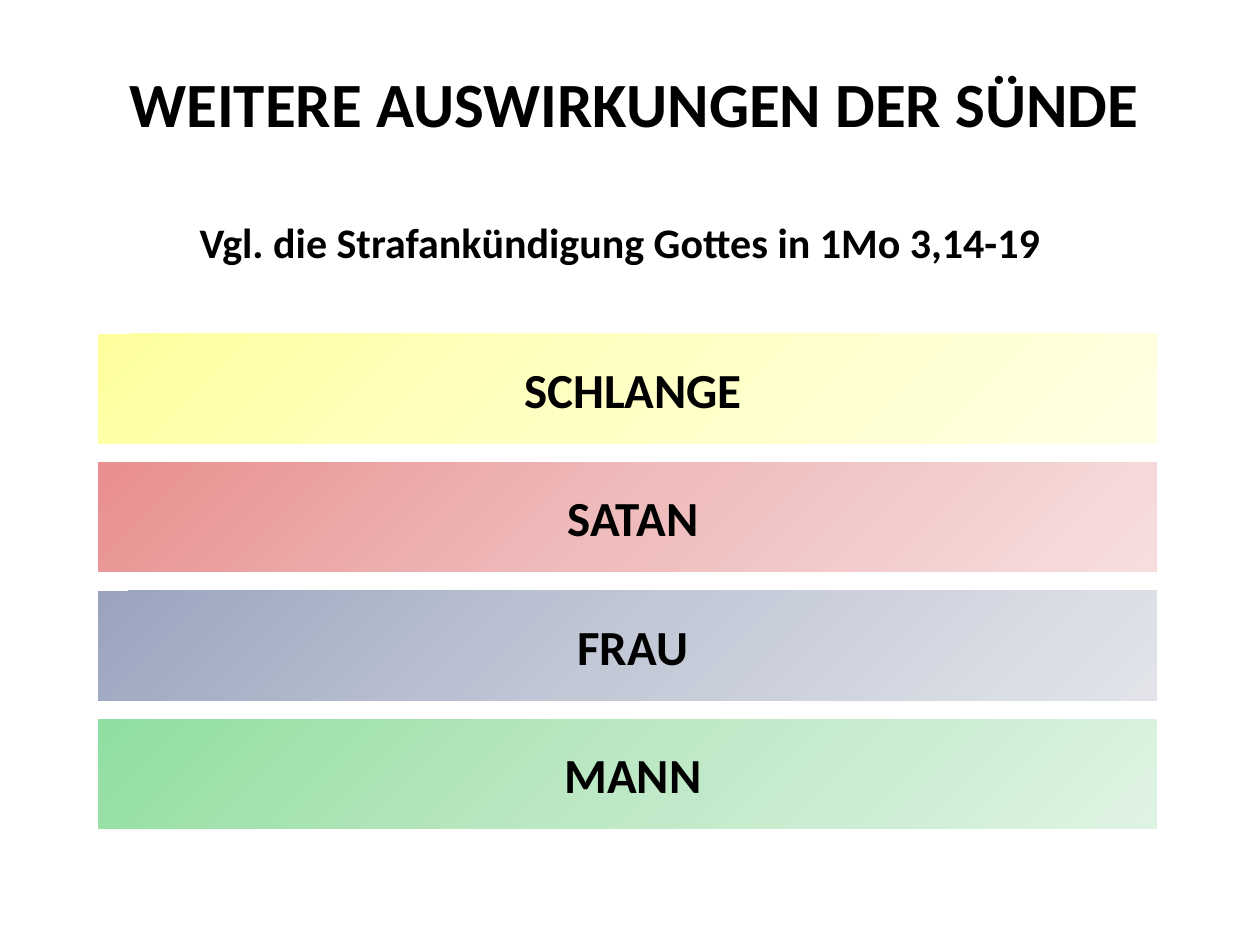
from copy import deepcopy
from dataclasses import dataclass

from lxml import etree
from pptx import Presentation
from pptx.dml.color import RGBColor
from pptx.enum.shapes import MSO_SHAPE
from pptx.enum.text import MSO_ANCHOR, MSO_AUTO_SIZE, PP_ALIGN
from pptx.oxml.ns import qn
from pptx.util import Inches, Pt

RECT = MSO_SHAPE.RECTANGLE
CENTER = PP_ALIGN.CENTER
MIDDLE = MSO_ANCHOR.MIDDLE
NO_FIT = MSO_AUTO_SIZE.NONE
TITLE_ONLY = 5


@dataclass(frozen=True)
class Theme:
    font: str = "Calibri"
    text: str = "000000"
    paper: str = "FFFFFF"
    paper_alpha: int = 60
    title_size: int = 36
    subtitle_size: int = 24
    bar_size: int = 28
    yellow: tuple = ("FFFFA0", "FFFFC5", "FFFFE3")
    red: tuple = ("E98F8F", "EFBCBC", "F7DEDE")
    blue: tuple = ("9AA4BE", "C2C8D6", "E2E4EA")
    green: tuple = ("91DEA0", "BDE8C5", "DFF3E3")


THEME = Theme()
BARS = [
    (" SCHLANGE", THEME.yellow),
    (" SATAN", THEME.red),
    (" FRAU", THEME.blue),
    (" MANN", THEME.green),
]


def set_text(shape, text, size, pad_y=0.05):
    """Write one centred bold line into a shape."""
    tf = shape.text_frame
    frame_format = {
        "word_wrap": True, "auto_size": NO_FIT, "vertical_anchor": MIDDLE,
        "margin_left": Inches(0.1), "margin_right": Inches(0.1),
        "margin_top": Inches(pad_y), "margin_bottom": Inches(pad_y),
    }
    for name, value in frame_format.items():
        setattr(tf, name, value)
    p = tf.paragraphs[0]
    p.alignment = CENTER
    r = p.add_run()
    r.text = text
    font_format = {"name": THEME.font, "size": Pt(size), "bold": True}
    for name, value in font_format.items():
        setattr(r.font, name, value)
    r.font.color.rgb = RGBColor.from_string(THEME.text)


def set_gradient(shape, colors):
    """Fill a shape with evenly spaced stops, running down to the right."""
    fill = shape.fill
    fill.gradient()
    fill.gradient_angle = 315
    stop_list = next(shape._element.spPr.iter(qn("a:gsLst")))
    for _ in colors[2:]:
        stop_list.insert(1, deepcopy(stop_list[0]))
    for i, (stop, color) in enumerate(zip(fill.gradient_stops, colors)):
        stop.color.rgb = RGBColor.from_string(color)
        stop.position = i / (len(colors) - 1)


def add_title(s, box, text):
    title = s.shapes.title
    title.left, title.top, title.width, title.height = map(Inches, box)
    title.fill.solid()
    title.fill.fore_color.rgb = RGBColor.from_string(THEME.paper)
    # Let the background show through the title panel
    color = next(title._element.spPr.iter(qn("a:srgbClr")))
    etree.SubElement(color, qn("a:alpha"), val=str(THEME.paper_alpha * 1000))
    set_text(title, text, THEME.title_size)


def add_subtitle(s, box, text):
    set_text(s.shapes.add_textbox(*map(Inches, box)), text, THEME.subtitle_size)


def add_bars(s, box, bars, gap):
    """Stack equal bars with equal gaps in the box."""
    left, top, width, height = box
    bar_height = (height - gap * (len(bars) - 1)) / len(bars)
    for i, (label, colors) in enumerate(bars):
        y = top + i * (bar_height + gap)
        sp = s.shapes.add_shape(RECT, *map(Inches, (left, y, width, bar_height)))
        sp.shadow.inherit = False
        sp.line.fill.background()
        set_gradient(sp, colors)
        set_text(sp, label, THEME.bar_size, pad_y=0.2)


def main():
    prs = Presentation()
    prs.slide_width, prs.slide_height = Inches(10), Inches(7.5)
    s = prs.slides.add_slide(prs.slide_layouts[TITLE_ONLY])

    # Bars, then headings
    add_bars(s, (0.78, 2.65, 8.4, 3.93), BARS, gap=0.15)
    add_title(s, (0.43, 0.5, 9.21, 0.63), "WEITERE AUSWIRKUNGEN DER SÜNDE")
    add_subtitle(s, (0.73, 1.67, 8.38, 0.5),
                 "Vgl. die Strafankündigung Gottes in 1Mo 3,14-19")

    prs.save("out.pptx")


if __name__ == "__main__":
    main()
